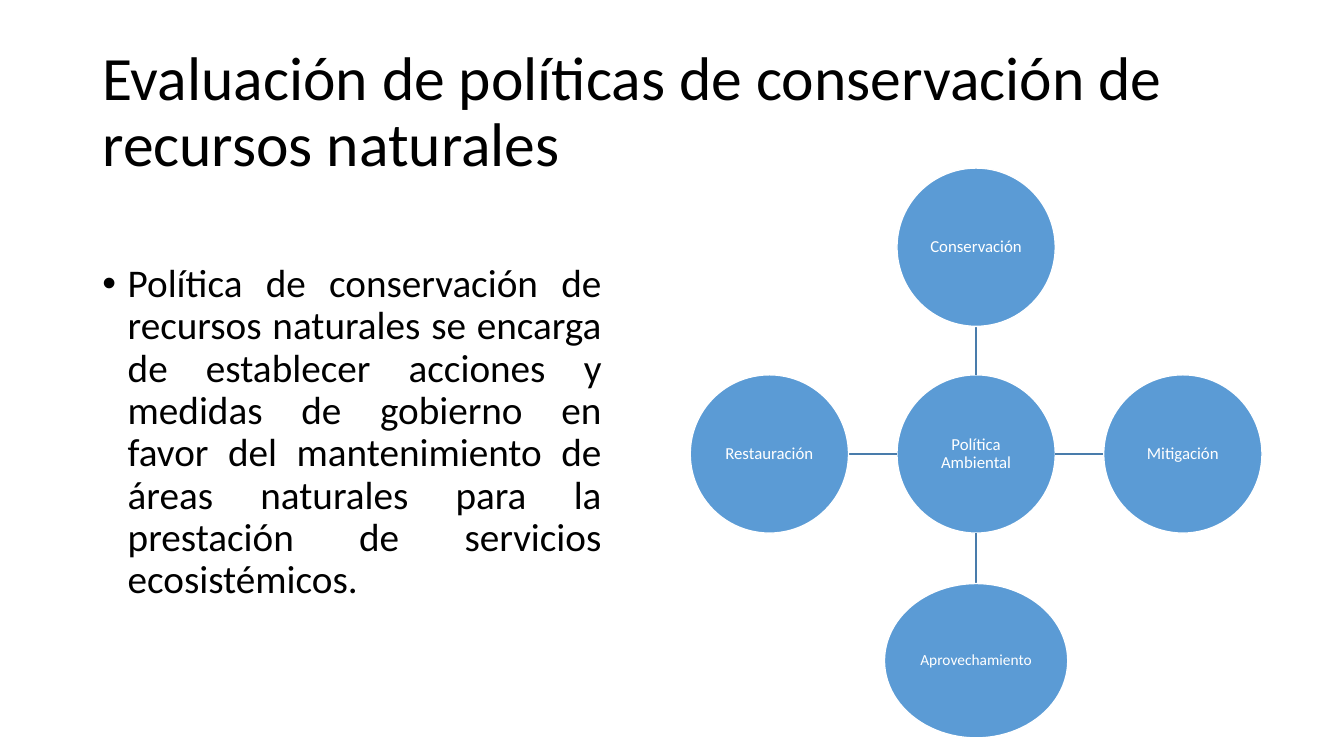
from dataclasses import dataclass
from pptx import Presentation, util as u
from pptx.dml.color import RGBColor
from pptx.enum import shapes, text
from pptx.oxml.ns import qn
from lxml import etree


@dataclass(frozen=True)
class Theme:
    font: str = "Calibri"
    ink: str = "000000"
    white: str = "FFFFFF"
    blue: str = "5B9BD5"
    link: str = "497CAB"
    title: int = 44
    body: int = 28
    label: int = 12
    small: int = 11


THEME = Theme()
HUB_X, HUB_Y = 24.6, 11.44
STEP = 5.21
SIZE = 3.99
NODES = [
    ("Conservación", 0, -1, SIZE, SIZE, THEME.label),
    ("Mitigación", 1, 0, SIZE, SIZE, THEME.label),
    ("Aprovechamiento", 0, 1, 4.62, 3.89, THEME.small),
    ("Restauración", -1, 0, SIZE, SIZE, THEME.label),
]


def color(code):
    return RGBColor.from_string(code)


def write(frame, words, size, ink, align, anchor):
    frame.word_wrap = True
    frame.vertical_anchor = anchor
    frame.text = words
    para = frame.paragraphs[0]
    para.alignment = align
    para.line_spacing = 0.9
    font = para.runs[0].font
    font.name = THEME.font
    font.size = u.Pt(size)
    font.color.rgb = color(ink)
    return para


def add_text(slide, box, words, size, align, anchor):
    frame = slide.shapes.add_textbox(*map(u.Cm, box)).text_frame
    return write(frame, words, size, THEME.ink, align, anchor)


def add_bullet(para):
    props = para._p.get_or_add_pPr()
    indent = u.Cm(0.64)
    props.set("marL", str(indent))
    props.set("indent", str(-indent))
    etree.SubElement(props, qn("a:buFont")).set("typeface", "Arial")
    etree.SubElement(props, qn("a:buChar")).set("char", "•")


def add_node(slide, words, x, y, width, height, size):
    box = (x - width / 2, y - height / 2, width, height)
    node = slide.shapes.add_shape(shapes.MSO_SHAPE.OVAL, *map(u.Cm, box))
    node.shadow.inherit = False
    node.fill.solid()
    node.fill.fore_color.rgb = color(THEME.blue)
    node.line.color.rgb = color(THEME.white)
    node.line.width = u.Pt(1)
    frame = node.text_frame
    frame.margin_left = frame.margin_right = u.Cm(0.03)
    frame.margin_top = frame.margin_bottom = u.Cm(0.03)
    write(frame, words, size, THEME.white,
          text.PP_ALIGN.CENTER, text.MSO_ANCHOR.MIDDLE)


def add_link(slide, dx, dy, width, height):
    near = SIZE / 2
    far = STEP - (width if dx else height) / 2
    ends = (HUB_X + dx * near, HUB_Y + dy * near,
            HUB_X + dx * far, HUB_Y + dy * far)
    link = slide.shapes.add_connector(
        shapes.MSO_CONNECTOR.STRAIGHT, *map(u.Cm, ends))
    link.line.color.rgb = color(THEME.link)
    link.line.width = u.Pt(1)
    etree.SubElement(link._element.spPr, qn("a:effectLst"))


def main():
    deck = Presentation()
    deck.slide_width, deck.slide_height = u.Cm(33.87), u.Cm(19.05)
    slide = deck.slides.add_slide(deck.slide_layouts[6])

    add_text(slide, (2.33, 1.02, 29.21, 3.68),
             "Evaluación de políticas de conservación de recursos naturales",
             THEME.title, text.PP_ALIGN.LEFT, text.MSO_ANCHOR.MIDDLE)
    para = add_text(
        slide, (2.33, 6.52, 13.08, 10.65),
        "Política de conservación de recursos naturales se encarga de "
        "establecer acciones y medidas de gobierno en favor del "
        "mantenimiento de áreas naturales para la prestación de "
        "servicios ecosistémicos.",
        THEME.body, text.PP_ALIGN.JUSTIFY, text.MSO_ANCHOR.TOP)
    add_bullet(para)

    add_node(slide, "Política Ambiental", HUB_X, HUB_Y, SIZE, SIZE, THEME.label)
    for words, dx, dy, width, height, size in NODES:
        add_link(slide, dx, dy, width, height)
        add_node(slide, words, HUB_X + dx * STEP, HUB_Y + dy * STEP,
                 width, height, size)

    deck.save("out.pptx")


if __name__ == "__main__":
    main()
